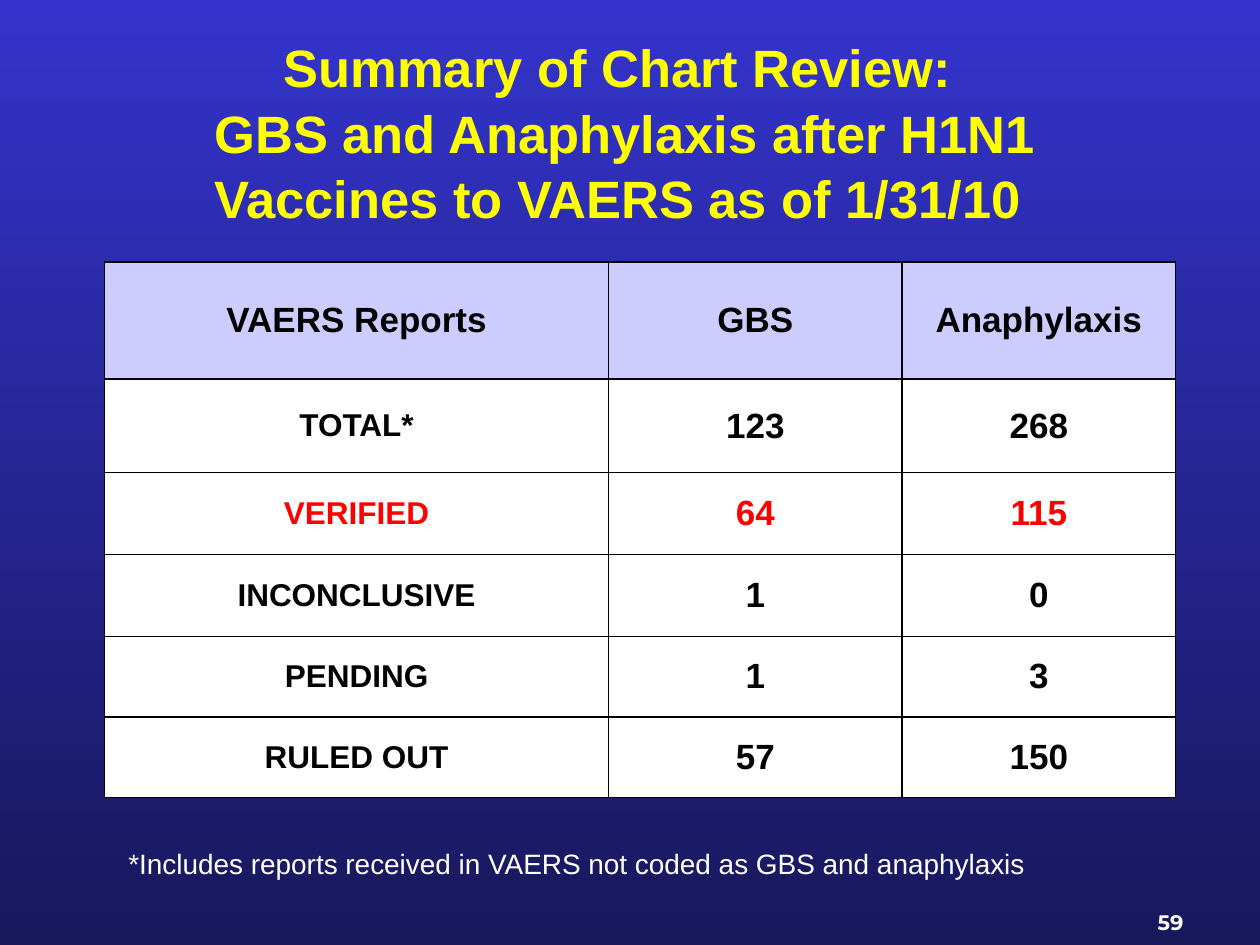
from dataclasses import dataclass
from lxml.etree import SubElement
from pptx import Presentation
from pptx.dml.color import RGBColor as Rgb
from pptx.enum.text import MSO_ANCHOR as Anchor, PP_ALIGN as Align
from pptx.oxml.ns import qn
from pptx.util import Inches, Pt


@dataclass(frozen=True)
class Theme:
    """Colours, fonts and type sizes of the slide."""
    top: str = "3333CC"
    base: str = "18185C"
    title: str = "FFFF00"
    head: str = "CCCCFF"
    white: str = "FFFFFF"
    black: str = "000000"
    red: str = "FF0000"
    font: str = "Arial"
    page: str = "Montserrat"
    big: int = 30
    mid: int = 20
    label: int = 18
    note: int = 16
    small: int = 12


T = Theme()
WIDE, HIGH = 10, 7.5
COLS = (4, 2.33, 2.17)
ROWS = (0.93, 0.74, 0.65, 0.65, 0.64, 0.64)
DATA = (
    ("VAERS Reports", "GBS", "Anaphylaxis"),
    ("TOTAL*", "123", "268"),
    ("VERIFIED", "64", "115"),
    ("INCONCLUSIVE", "1", "0"),
    ("PENDING", "1", "3"),
    ("RULED OUT", "57", "150"),
)


def add_run(para, text, size, color, bold=True, font=T.font):
    """Append one styled run to a paragraph."""
    run = para.add_run()
    run.text = text
    run.font.name, run.font.size, run.font.bold = font, Pt(size), bold
    run.font.color.rgb = Rgb.from_string(color)


def set_back(slide):
    """Fill the background with a vertical gradient."""
    fill = slide.background.fill
    fill.gradient()
    fill.gradient_angle = 270
    for stop, color in zip(fill.gradient_stops, (T.top, T.base)):
        stop.color.rgb = Rgb.from_string(color)


def set_title(slide, lines):
    """Place the title and write its lines."""
    box = slide.shapes.title
    box.left, box.top = Inches(0.75), Inches(0.33)
    box.width, box.height = Inches(8.42), Inches(1.42)
    frame = box.text_frame
    frame.vertical_anchor = Anchor.MIDDLE
    para = frame.paragraphs[0]
    para.alignment, para.line_spacing = Align.CENTER, 1.04
    for i, line in enumerate(lines):
        if i:
            para.add_line_break()
        add_run(para, line, T.big, T.title)


def add_text(slide, area, text, size, align=Align.LEFT, **style):
    """Add a one-line text box."""
    box = slide.shapes.add_textbox(*map(Inches, area))
    box.text_frame.word_wrap = True
    para = box.text_frame.paragraphs[0]
    para.alignment = align
    add_run(para, text, size, T.white, **style)


def set_edges(cell):
    """Draw a thin line on each side of a cell."""
    props = cell._tc.get_or_add_tcPr()
    for i, side in enumerate("LRTB"):
        line = SubElement(props, qn(f"a:ln{side}"), w=str(Pt(1)))
        fill = SubElement(line, qn("a:solidFill"))
        SubElement(fill, qn("a:srgbClr"), val=T.black)
        props.insert(i, line)


def fill_cell(cell, text, row, col):
    """Write and style one cell by its place in the table."""
    cell.fill.solid()
    cell.fill.fore_color.rgb = Rgb.from_string(T.white if row else T.head)
    cell.vertical_anchor = Anchor.MIDDLE
    para = cell.text_frame.paragraphs[0]
    para.alignment = Align.CENTER
    props = para._p.get_or_add_pPr()
    props.set("marL", str(Inches(0.38)))
    props.set("indent", str(Inches(-0.38)))
    if row and col:
        para.space_before = Pt(T.mid * 0.2)
    size = T.label if row and not col else T.mid
    color = T.red if DATA[row][0] == "VERIFIED" else T.black
    add_run(para, text, size, color)
    set_edges(cell)


def add_grid(slide, left, top):
    """Add the table of report counts."""
    area = map(Inches, (left, top, sum(COLS), sum(ROWS)))
    table = slide.shapes.add_table(len(ROWS), len(COLS), *area).table
    table.horz_banding = table.first_row = False
    for col, width in zip(table.columns, COLS):
        col.width = Inches(width)
    for row, height in zip(table.rows, ROWS):
        row.height = Inches(height)
    for r, line in enumerate(DATA):
        for c, text in enumerate(line):
            fill_cell(table.cell(r, c), text, r, c)


def main():
    """Build the slide and save it."""
    deck = Presentation()
    deck.slide_width, deck.slide_height = Inches(WIDE), Inches(HIGH)
    slide = deck.slides.add_slide(deck.slide_layouts[5])
    set_back(slide)
    set_title(slide, (
        "Summary of Chart Review: ",
        "GBS and Anaphylaxis after H1N1 Vaccines to VAERS as of 1/31/10 ",
    ))
    add_grid(slide, 0.83, 2.08)
    add_text(slide, (0.92, 6.67, 8.67, 0.37),
             "*Includes reports received in VAERS not coded as GBS and anaphylaxis",
             T.note, bold=False)
    add_text(slide, (8.58, 7.17, 1.42, 0.3), "59", T.small,
             Align.CENTER, font=T.page)
    deck.save("out.pptx")


if __name__ == "__main__":
    main()
